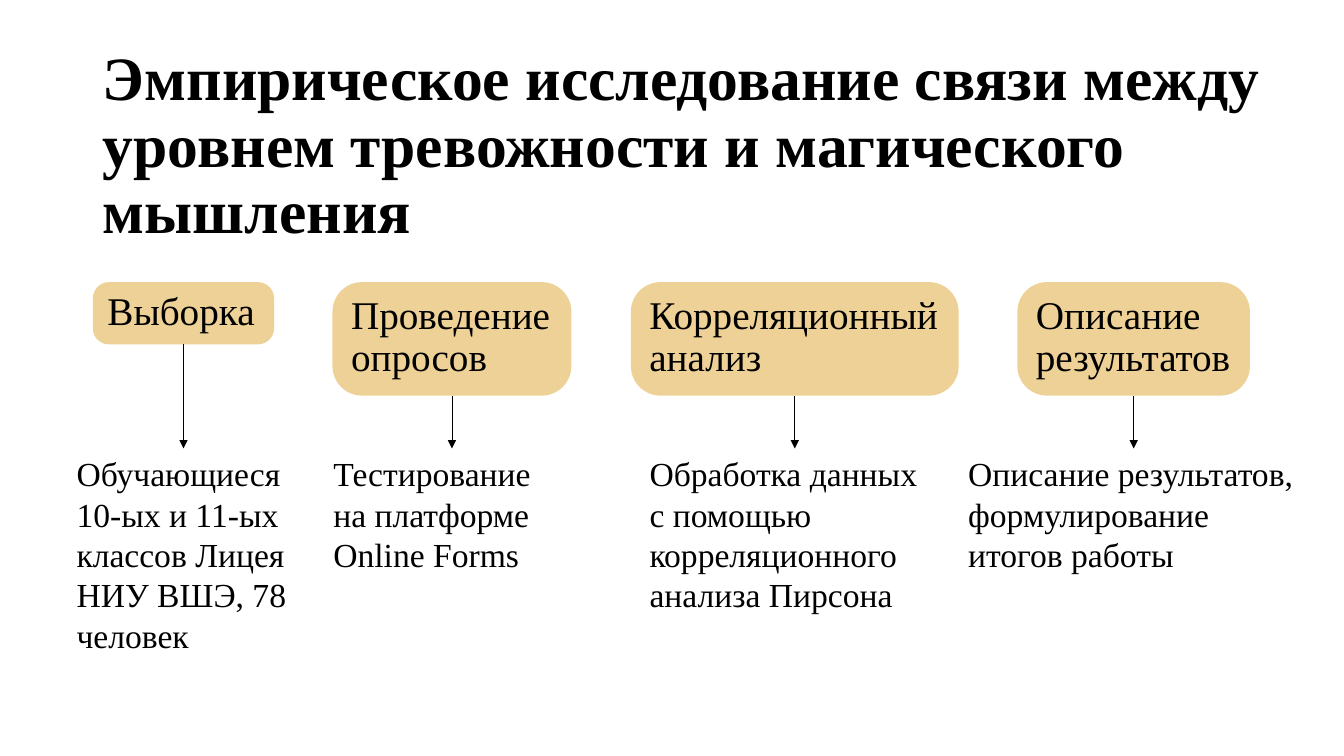
from pptx import Presentation
from pptx.dml.color import RGBColor
from pptx.enum.shapes import MSO_CONNECTOR as Line, MSO_SHAPE as Kind
from pptx.enum.text import MSO_ANCHOR as Anchor, MSO_AUTO_SIZE as Fit, PP_ALIGN as Align
from pptx.oxml.ns import qn
from pptx.util import Cm, Pt
from lxml.etree import SubElement as Sub


def tint(code):
    return RGBColor.from_string(code)


def write(shape, text, size, anchor=Anchor.TOP, gap=None, bold=False):
    frame = shape.text_frame
    frame.word_wrap = True
    frame.auto_size = Fit.NONE
    frame.vertical_anchor = anchor
    frame.text = text
    para = frame.paragraphs[0]
    para.alignment = Align.LEFT
    para.line_spacing = gap
    para.font.name = "Times New Roman"
    para.font.size = Pt(size)
    para.font.bold = bold
    para.font.color.rgb = tint("000000")


deck = Presentation()
deck.slide_width, deck.slide_height = Cm(33.87), Cm(19.05)
slide = deck.slides.add_slide(deck.slide_layouts[5])
shapes = slide.shapes

title = shapes.title
title.left, title.top, title.width, title.height = Cm(2.34), Cm(0.61), Cm(30.02), Cm(6.2)
write(title, "Эмпирическое исследование связи между уровнем тревожности и магического мышления",
      44, Anchor.MIDDLE, 0.9, True)

steps = [
    ("Выборка", 2.34, 4.57, 1.57,
     "Обучающиеся 10-ых и 11-ых классов Лицея НИУ ВШЭ, 78 человек", 5.89, 5.38),
    ("Проведение опросов", 8.38, 6.02, 2.86,
     "Тестирование на платформе Online Forms", 6.48, 3.33),
    ("Корреляционный анализ", 15.9, 8.26, 2.86,
     "Обработка данных с помощью корреляционного анализа Пирсона", 7.82, 4.37),
    ("Описание результатов", 25.64, 5.86, 2.86,
     "Описание результатов, формулирование итогов работы", 8.84, 3.33),
]

for name, left, wide, high, text, span, depth in steps:
    box = shapes.add_shape(Kind.ROUNDED_RECTANGLE, Cm(left), Cm(7.11), Cm(wide), Cm(high))
    box.adjustments[0] = 0.26
    box.shadow.inherit = False
    box.fill.solid()
    box.fill.fore_color.rgb = tint("EED196")
    box.line.fill.background()
    write(box, name, 28, gap=0.9)

    note = shapes.add_textbox(Cm(left + (wide - span) / 2), Cm(11.3), Cm(span), Cm(depth))
    write(note, text, 24)

    arrow = shapes.add_connector(Line.STRAIGHT, 0, 0, 0, 0)
    arrow.begin_connect(box, 2)
    arrow.end_connect(note, 0)
    arrow.line.color.rgb = tint("000000")
    arrow.line.width = Pt(0.5)
    Sub(arrow.line._get_or_add_ln(), qn("a:tailEnd"), type="triangle")
    Sub(arrow._element.spPr, qn("a:effectLst"))

deck.save("out.pptx")
